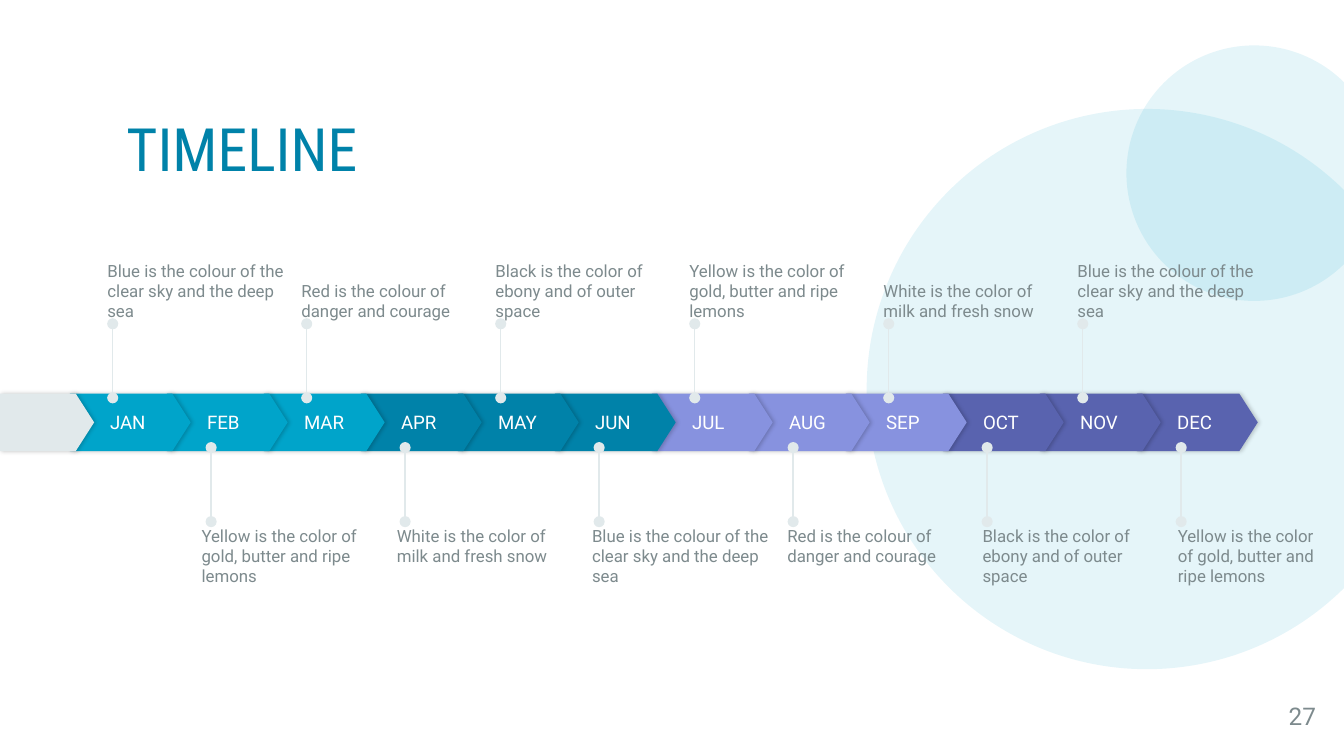
from dataclasses import dataclass

from lxml import etree
from pptx import Presentation
from pptx.dml.color import RGBColor
from pptx.enum.shapes import MSO_CONNECTOR, MSO_SHAPE
from pptx.enum.text import MSO_ANCHOR, MSO_AUTO_SIZE, PP_ALIGN
from pptx.oxml.ns import qn
from pptx.util import Cm, Pt

CHORD, PENTAGON = MSO_SHAPE.CHORD, MSO_SHAPE.PENTAGON
STRAIGHT = MSO_CONNECTOR.STRAIGHT
TOP, MIDDLE, BOTTOM = MSO_ANCHOR.TOP, MSO_ANCHOR.MIDDLE, MSO_ANCHOR.BOTTOM
LEFT, RIGHT = PP_ALIGN.LEFT, PP_ALIGN.RIGHT
TITLE_ONLY = 5


@dataclass(frozen=True)
class Theme:
    title_font: str = "Roboto Condensed"
    body_font: str = "Roboto"
    title_size: int = 32
    number_size: int = 13
    month_size: int = 10
    note_size: int = 9
    title: str = "0082A9"
    text: str = "7D8A8D"
    white: str = "FFFFFF"
    pale: str = "E1E9EB"
    circle: str = "00A4CA"
    quarters: tuple = ("00A4CA", "0082A9", "8792DF", "5963AF")


THEME = Theme()
MONTHS = "JAN FEB MAR APR MAY JUN JUL AUG SEP OCT NOV DEC".split()
BLUE = "Blue is the colour of the clear sky and the deep sea"
RED = "Red is the colour of danger and courage"
BLACK = "Black is the color of ebony and of outer space"
YELLOW = "Yellow is the color of gold, butter and ripe lemons"
WHITE = "White is the color of milk and fresh snow"
NOTES_ABOVE = [BLUE, RED, BLACK, YELLOW, WHITE, BLUE]
NOTES_BELOW = [YELLOW, WHITE, BLUE, RED, BLACK, YELLOW]

MONTH_STEP = 22 / 12
NOTE_WIDTH, NOTE_HEIGHT, NOTE_RIGHT = 3.48, 1.47, 25.12


def cm_box(box):
    return [Cm(v) for v in box]


def write(shape, text, size, color, font=THEME.body_font, anchor=TOP,
          align=LEFT, inset=0):
    tf = shape.text_frame
    tf.text = text
    tf.word_wrap = True
    tf.auto_size = MSO_AUTO_SIZE.NONE
    tf.vertical_anchor = anchor
    tf.margin_left = Cm(inset)
    tf.margin_top = tf.margin_right = tf.margin_bottom = 0
    p = tf.paragraphs[0]
    p.alignment = align
    r = p.runs[0]
    r.font.name = font
    r.font.size = Pt(size)
    r.font.color.rgb = RGBColor.from_string(color)


def add_filled(s, kind, box, color):
    sp = s.shapes.add_shape(kind, *cm_box(box))
    sp.shadow.inherit = False
    sp.fill.solid()
    sp.fill.fore_color.rgb = RGBColor.from_string(color)
    sp.line.fill.background()
    return sp


def add_text(s, box, *args, **kwargs):
    write(s.shapes.add_textbox(*cm_box(box)), *args, **kwargs)


def add_circle(s, box):
    """Translucent circle cut off at the slide's right edge."""
    sp = add_filled(s, CHORD, box, THEME.circle)
    sp.adjustments[0], sp.adjustments[1] = 27, 189
    clr = sp.fill._xPr.find(qn("a:solidFill"))[0]
    etree.SubElement(clr, qn("a:alpha"), val="10000")
    return sp


def add_background(s, boxes):
    for i, box in enumerate(boxes):
        s.shapes._spTree.insert(2 + i, add_circle(s, box)._element)


def add_title(s, box, text):
    sp = s.shapes.title
    sp.left, sp.top, sp.width, sp.height = cm_box(box)
    write(sp, text, THEME.title_size, THEME.title, THEME.title_font, MIDDLE)
    sp.text_frame.paragraphs[0].line_spacing = 0.9


def add_arrow(s, box, color):
    sp = add_filled(s, PENTAGON, box, color)
    sp.adjustments[0] = 0.32
    effects = sp._element.spPr.find(qn("a:effectLst"))
    shadow = etree.SubElement(effects, qn("a:outerShdw"), blurRad=str(Pt(2.2)),
                              dist=str(Pt(0.8)), dir="0", algn="ctr",
                              rotWithShape="0")
    clr = etree.SubElement(shadow, qn("a:srgbClr"), val="000000")
    etree.SubElement(clr, qn("a:alpha"), val="20000")
    return sp


def add_month_bar(s, box, lead_width):
    """Overlapping arrows, the earliest in front, after a pale lead-in."""
    left, top, width, height = box
    arrow_width = width - MONTH_STEP * (len(MONTHS) - 1)
    for i, month in reversed(list(enumerate(MONTHS))):
        sp = add_arrow(s, (left + i * MONTH_STEP, top, arrow_width, height),
                       THEME.quarters[i // 3])
        write(sp, month, THEME.month_size, THEME.white, anchor=MIDDLE,
              inset=0.76)
    add_arrow(s, (0, top, lead_width, height), THEME.pale)


def add_stem(s, x, y1, y2):
    line = s.shapes.add_connector(STRAIGHT, Cm(x), Cm(y1), Cm(x), Cm(y2))
    line.line.color.rgb = RGBColor.from_string(THEME.pale)
    line.line.width = Pt(0.75)
    for end in ("a:headEnd", "a:tailEnd"):
        etree.SubElement(line.line._ln, qn(end), type="oval")
    etree.SubElement(line._element.spPr, qn("a:effectLst"))


def add_notes(s, notes, stem_x, stem_y, text_x, text_y, text_step, anchor):
    """Row of notes, one every second month, each with its stem."""
    for i, note in enumerate(notes):
        add_stem(s, stem_x + 2 * i * MONTH_STEP, *stem_y)
        x = text_x + i * text_step
        width = min(NOTE_WIDTH, NOTE_RIGHT - x)
        add_text(s, (x, text_y, width, NOTE_HEIGHT), note, THEME.note_size,
                 THEME.text, anchor=anchor)


def add_timeline_slide(prs):
    s = prs.slides.add_slide(prs.slide_layouts[TITLE_ONLY])
    add_background(s, [(16.38, 2.06, 10.59, 10.59), (21.29, 0.86, 4.83, 4.83)])
    add_title(s, (2.39, 1.83, 18.34, 2.08), "TIMELINE")
    add_text(s, (23.9, 13.13, 0.97, 0.79), "27", THEME.number_size, THEME.text,
             anchor=MIDDLE, align=RIGHT)
    add_month_bar(s, (1.32, 7.44, 22.45, 1.09), lead_width=1.78)
    add_notes(s, NOTES_ABOVE, 2.13, (7.52, 6.12), 2.03, 4.6, 2 * MONTH_STEP,
              BOTTOM)
    add_notes(s, NOTES_BELOW, 3.99, (9.86, 8.46), 3.81, 9.93, 3.69, TOP)


def main():
    prs = Presentation()
    prs.slide_width, prs.slide_height = Cm(25.4), Cm(14.29)
    add_timeline_slide(prs)
    prs.save("out.pptx")


if __name__ == "__main__":
    main()
